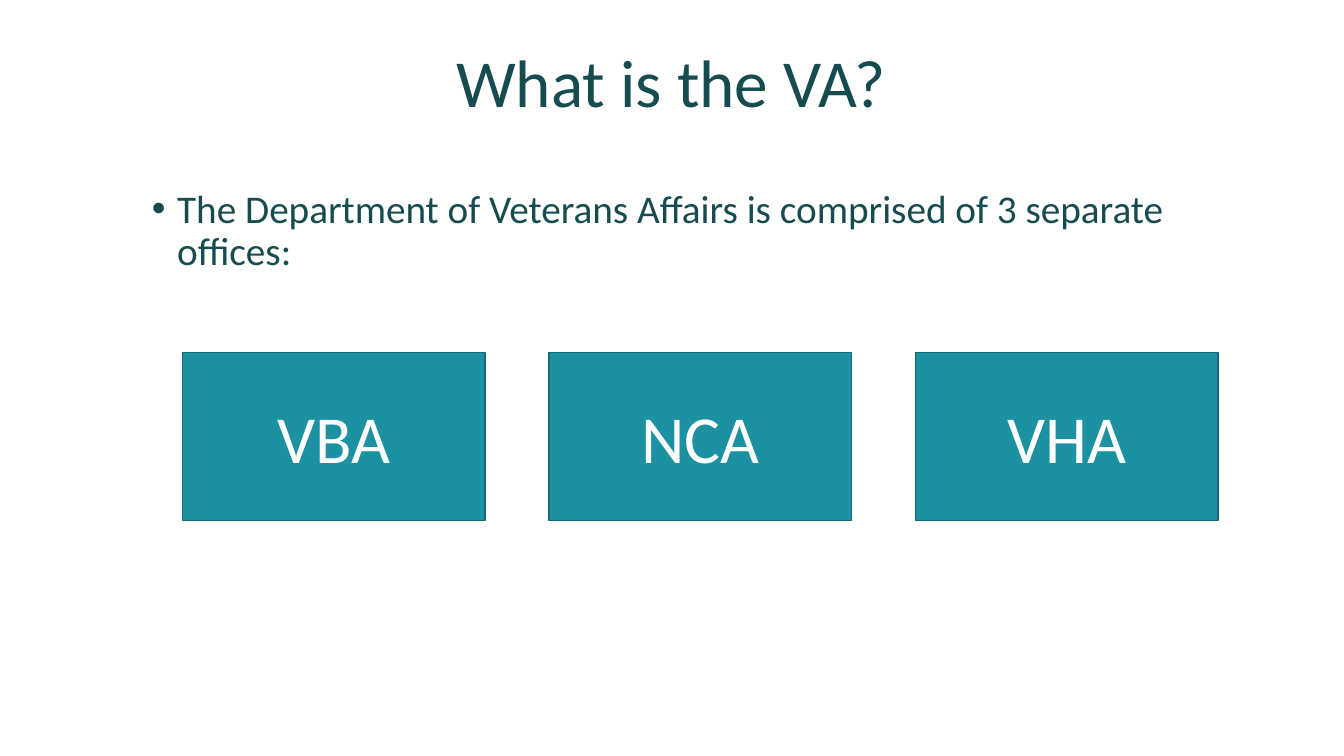
"""Build a slide that names the three offices of the VA."""
from dataclasses import dataclass

import pptx
import pptx.dml.color
import pptx.enum.shapes
import pptx.enum.text
import pptx.oxml.ns
import pptx.presentation
import pptx.shapes.autoshape
import pptx.slide
import pptx.util
from lxml import etree

Pt = pptx.util.Pt
RGB = pptx.dml.color.RGBColor
ALIGN = pptx.enum.text.PP_ALIGN
ANCHOR = pptx.enum.text.MSO_ANCHOR


@dataclass(frozen=True)
class Theme:
    font: str = "Calibri"
    ink: RGB = RGB(0x16, 0x4B, 0x4F)
    paper: RGB = RGB(0xFF, 0xFF, 0xFF)
    box_fill: RGB = RGB(0x1B, 0x91, 0xA1)
    box_line: RGB = RGB(0x14, 0x6B, 0x77)
    large: int = 48
    body: int = 28


@dataclass(frozen=True)
class Box:
    left: float
    top: float
    width: float
    height: float

    def lengths(self) -> tuple[pptx.util.Length, ...]:
        return tuple(Pt(v) for v in (self.left, self.top, self.width, self.height))


@dataclass(frozen=True)
class Office:
    name: str
    box: Box


THEME = Theme()
TITLE_BOX = Box(101.5, 0.75, 756, 90)
BODY_BOX = Box(101.5, 131.75, 756, 354)
OFFICE_PITCH = 261.75
OFFICES = [
    Office(name, Box(130.5 + i * OFFICE_PITCH, 252, 216, 120))
    for i, name in enumerate(("VBA", "NCA", "VHA"))
]


def write(sp: pptx.shapes.autoshape.Shape, text: str, *, size: int,
          color: RGB, align: ALIGN = ALIGN.LEFT, anchor: ANCHOR = ANCHOR.TOP,
          spacing: float = 1.0, bullet: bool = False) -> None:
    tf = sp.text_frame
    tf.word_wrap = True
    tf.vertical_anchor = anchor
    p = tf.paragraphs[0]
    p.alignment = align
    p.line_spacing = spacing
    if bullet:
        pPr = p._p.get_or_add_pPr()
        pPr.set("marL", str(Pt(18)))
        pPr.set("indent", str(-Pt(18)))
        etree.SubElement(pPr, pptx.oxml.ns.qn("a:buFont"), typeface="Arial")
        etree.SubElement(pPr, pptx.oxml.ns.qn("a:buChar"), char="•")
    r = p.add_run()
    r.text = text
    r.font.name = THEME.font
    r.font.size = Pt(size)
    r.font.color.rgb = color


def add_office(s: pptx.slide.Slide, office: Office) -> None:
    sp = s.shapes.add_shape(
        pptx.enum.shapes.MSO_SHAPE.RECTANGLE, *office.box.lengths())
    sp.shadow.inherit = False
    sp.fill.solid()
    sp.fill.fore_color.rgb = THEME.box_fill
    sp.line.color.rgb = THEME.box_line
    sp.line.width = Pt(1)
    write(sp, office.name, size=THEME.large, color=THEME.paper,
          align=ALIGN.CENTER, anchor=ANCHOR.MIDDLE)


def main() -> None:
    prs = pptx.Presentation()
    prs.slide_width, prs.slide_height = Pt(960), Pt(540)
    s = prs.slides.add_slide(prs.slide_layouts[6])
    s.background.fill.solid()
    s.background.fill.fore_color.rgb = THEME.paper
    write(s.shapes.add_textbox(*TITLE_BOX.lengths()), "What is the VA?",
          size=THEME.large, color=THEME.ink, align=ALIGN.CENTER,
          anchor=ANCHOR.BOTTOM, spacing=0.9)
    write(s.shapes.add_textbox(*BODY_BOX.lengths()),
          "The Department of Veterans Affairs is comprised of 3 separate offices:",
          size=THEME.body, color=THEME.ink, spacing=0.9, bullet=True)
    for office in OFFICES:
        add_office(s, office)
    prs.save("out.pptx")


if __name__ == "__main__":
    main()
